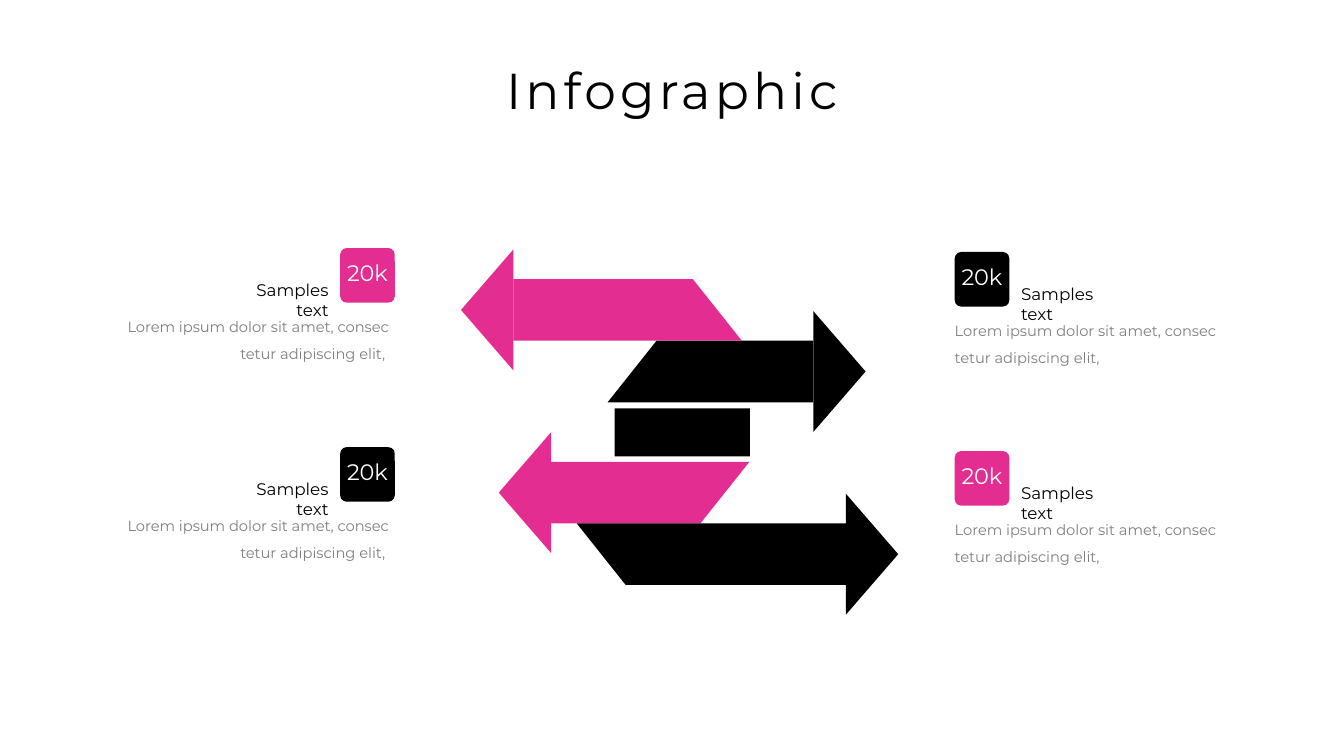
from dataclasses import dataclass

from pptx import Presentation
from pptx.dml.color import RGBColor
from pptx.enum.shapes import MSO_SHAPE
from pptx.enum.text import MSO_ANCHOR, PP_ALIGN
from pptx.util import Pt


@dataclass(frozen=True)
class Theme:
    font: str = "Montserrat"
    pink: str = "E32D91"
    black: str = "000000"
    gray: str = "808080"
    white: str = "FFFFFF"
    title_size: float = 36
    badge_size: float = 16
    label_size: float = 12
    body_size: float = 10.5


THEME = Theme()


def paint(shape, color):
    shape.shadow.inherit = False
    shape.fill.solid()
    shape.fill.fore_color.rgb = RGBColor.from_string(color)
    shape.line.fill.background()


def add_text(slide, left, top, width, height, text, size, color,
             align=PP_ALIGN.LEFT, wrap=True, line_spacing=None):
    """Add a text box without insets and return its run."""
    box = slide.shapes.add_textbox(Pt(left), Pt(top), Pt(width), Pt(height))
    frame = box.text_frame
    frame.word_wrap = wrap
    frame.vertical_anchor = MSO_ANCHOR.TOP
    frame.margin_left = frame.margin_right = frame.margin_top = frame.margin_bottom = 0
    paragraph = frame.paragraphs[0]
    paragraph.alignment = align
    if line_spacing:
        paragraph.line_spacing = line_spacing
    run = paragraph.add_run()
    run.text = text
    run.font.name = THEME.font
    run.font.size = Pt(size)
    run.font.color.rgb = RGBColor.from_string(color)
    return run


def add_title(slide, left, top, width, height):
    run = add_text(slide, left, top, width, height, "Infographic", THEME.title_size,
                   THEME.black, PP_ALIGN.CENTER, wrap=False)
    run.font._element.set("spc", "300")


def add_polygon(slide, points, color):
    corners = [(Pt(x), Pt(y)) for x, y in points]
    builder = slide.shapes.build_freeform(*corners[0], scale=1.0)
    builder.add_line_segments(corners[1:], close=True)
    paint(builder.convert_to_shape(), color)


def add_arrow(slide, tip, top, tail_top, tail_bottom, color):
    """Add a band with a slanted tail and a triangular head pointing at tip."""
    band, head_length, head_half = 44, 37.4, 43.2
    middle = top + band / 2
    base = tip + head_length if tip < tail_top else tip - head_length
    add_polygon(slide, [(base, top), (tail_top, top), (tail_bottom, top + band),
                        (base, top + band)], color)
    add_polygon(slide, [(tip, middle), (base, middle - head_half),
                        (base, middle + head_half)], color)


def add_arrow_stack(slide, left, top):
    """Add the four interlocking arrows and the bar between the two pairs."""
    slant = 35
    arrows = [  # tip, top, upper tail corner, slant, color
        (27, 130.5, 206, -slant, THEME.pink),
        (312.3, 174.5, 82.7, slant, THEME.black),
        (289, 44, 139.7, -slant, THEME.black),
        (0, 0, 165.6, slant, THEME.pink),
    ]
    for tip, offset, tail, shift, color in arrows:
        add_arrow(slide, left + tip, top + offset, left + tail,
                  left + tail + shift, color)
    bar = slide.shapes.add_shape(MSO_SHAPE.RECTANGLE, Pt(left + 109.8), Pt(top + 92.3),
                                 Pt(96.6), Pt(34.4))
    paint(bar, THEME.black)


def add_callout(slide, left, top, color, mirrored):
    """Add a badge, its label and a description; mirrored puts the badge on the right."""
    badge, label_width, body_width, gap = 39, 76, 188, 8.3
    if mirrored:
        align, ending = PP_ALIGN.RIGHT, " "
        badge_left = left + body_width + 4 - badge
        label_left = badge_left - gap - label_width
    else:
        align, ending = PP_ALIGN.LEFT, ""
        badge_left = left
        label_left = left + badge + gap
    square = slide.shapes.add_shape(MSO_SHAPE.ROUNDED_RECTANGLE, Pt(badge_left), Pt(top),
                                    Pt(badge), Pt(badge))
    square.adjustments[0] = 0.118
    paint(square, color)
    add_text(slide, left, top + 43.7, body_width, 36,
             "Lorem ipsum dolor sit amet, consec tetur adipiscing elit," + ending,
             THEME.body_size, THEME.gray, align, line_spacing=1.5)
    add_text(slide, label_left, top + 22.4, label_width, 14.4, "Samples text",
             THEME.label_size, THEME.black, align)
    add_text(slide, badge_left + 4.5, top + 8, badge - 9, 19.4, "20k",
             THEME.badge_size, THEME.white, PP_ALIGN.CENTER, wrap=False)


def add_callout_column(slide, left, top, colors, mirrored=False):
    for row, color in enumerate(colors):
        add_callout(slide, left, top + row * 142.2, color, mirrored)


def main():
    presentation = Presentation()
    presentation.slide_width, presentation.slide_height = Pt(960), Pt(540)
    slide = presentation.slides.add_slide(presentation.slide_layouts[6])
    add_title(slide, 360, 42.5, 240, 44)
    add_arrow_stack(slide, 329.3, 199.4)
    add_callout_column(slide, 682, 180, [THEME.black, THEME.pink])
    add_callout_column(slide, 90, 177.2, [THEME.pink, THEME.black], mirrored=True)
    presentation.save("out.pptx")


if __name__ == "__main__":
    main()
